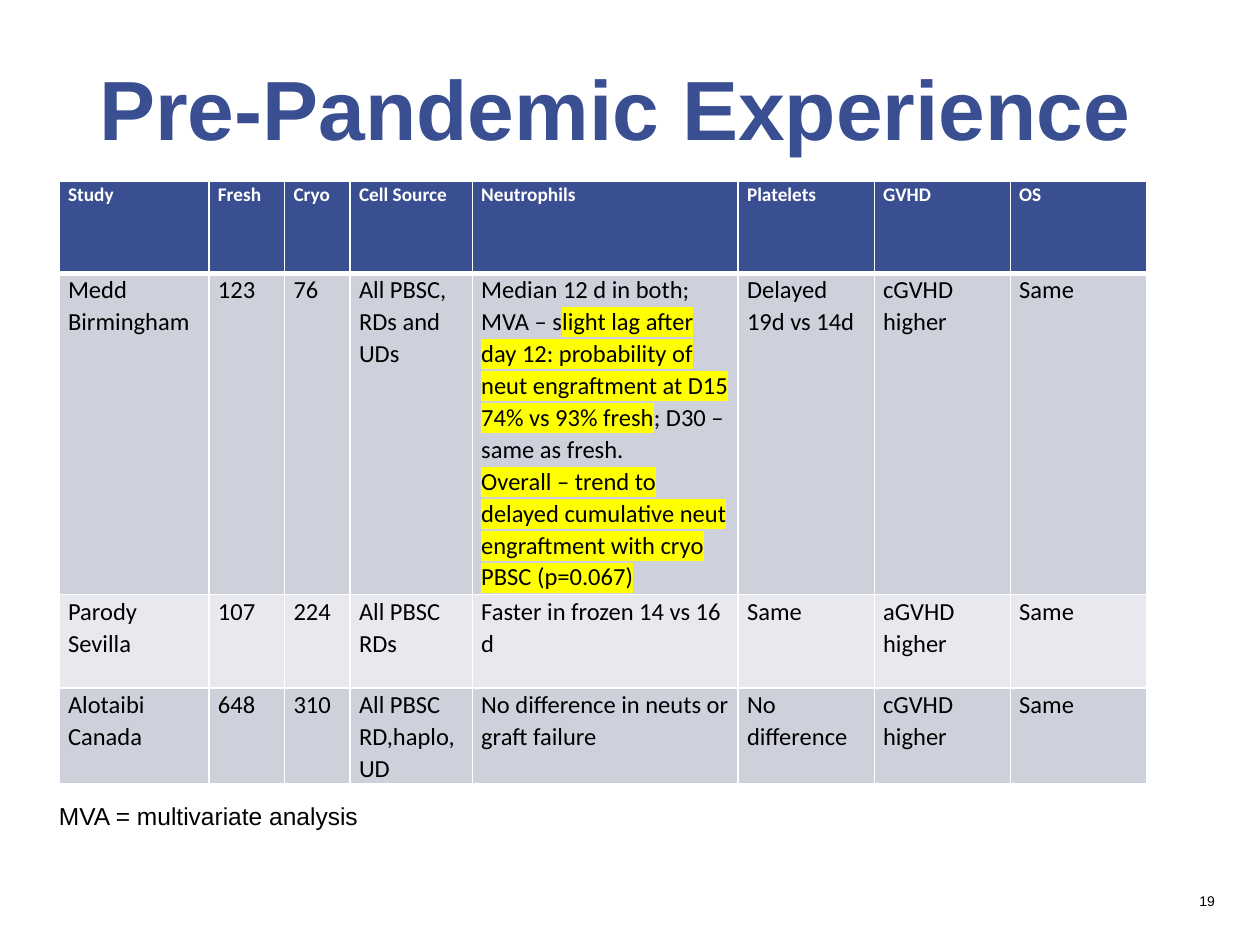
from lxml import etree
from pptx import Presentation
from pptx.dml.color import RGBColor
from pptx.enum.text import MSO_ANCHOR, PP_ALIGN
from pptx.oxml.ns import qn
from pptx.util import Inches, Pt

TOP, MIDDLE, BOTTOM = MSO_ANCHOR.TOP, MSO_ANCHOR.MIDDLE, MSO_ANCHOR.BOTTOM
LEFT, RIGHT = PP_ALIGN.LEFT, PP_ALIGN.RIGHT

COLORS = {
    "navy": "3A4F92",
    "white": "FFFFFF",
    "black": "000000",
    "band_dark": "CED0DC",
    "band_light": "E8E9EE",
    "highlight": "FFFF00",
}

COL_WIDTHS = [1.19, 0.6, 0.52, 0.97, 2.11, 1.08, 1.08, 1.08]
ROW_HEIGHTS = [0.73, 2.55, 0.74, 0.76]

# A cell is a string with one paragraph per line; text between * is highlighted.
ROWS = [
    ["Study", "Fresh", "Cryo", "Cell Source", "Neutrophils", "Platelets", "GVHD", "OS"],
    ["Medd Birmingham", "123", "76", "All PBSC,\nRDs and UDs",
     "Median 12 d in both; MVA – s*light lag after day 12: probability of neut "
     "engraftment at D15 74% vs 93% fresh*; D30 – same as fresh.\n"
     "*Overall – trend to delayed cumulative neut engraftment with cryo PBSC (p=0.067)*",
     "Delayed 19d vs 14d", "cGVHD higher", "Same"],
    ["Parody\nSevilla", "107", "224", "All PBSC\nRDs", "Faster in frozen 14 vs 16 d",
     "Same", "aGVHD higher", "Same"],
    ["Alotaibi\nCanada", "648", "310", "All PBSC\nRD,haplo,UD",
     "No difference in neuts or graft failure", "No difference", "cGVHD\nhigher", "Same"],
]


def add_run(p, text, font, size, color, bold=False, highlight=False):
    r = p.add_run()
    r.text = text
    r.font.size = Pt(size)
    r.font.bold = bold
    r.font.color.rgb = RGBColor.from_string(COLORS[color])
    if highlight:
        hl = etree.SubElement(r._r.get_or_add_rPr(), qn("a:highlight"))
        etree.SubElement(hl, qn("a:srgbClr"), val=COLORS["highlight"])
    r.font.name = font


def add_text(s, box, text, size, color, bold=False, align=LEFT, anchor=TOP):
    sp = s.shapes.add_textbox(*map(Inches, box))
    tf = sp.text_frame
    tf.word_wrap = True
    tf.vertical_anchor = anchor
    p = tf.paragraphs[0]
    p.alignment = align
    add_run(p, text, "Arial", size, color, bold)


def set_borders(cell, top, bottom):
    """Draw white borders, with the given top and bottom widths in points."""
    tcPr = cell._tc.get_or_add_tcPr()
    for side, width in (("L", 1), ("R", 1), ("T", top), ("B", bottom)):
        ln = etree.SubElement(tcPr, qn(f"a:ln{side}"), w=str(Pt(width)))
        fill = etree.SubElement(ln, qn("a:solidFill"))
        etree.SubElement(fill, qn("a:srgbClr"), val=COLORS["white"])


def fill_cell(cell, text, row):
    header = row == 0
    band = "navy" if header else "band_dark" if row % 2 else "band_light"
    set_borders(cell, top=3 if row == 1 else 1, bottom=3 if header else 1)
    cell.fill.solid()
    cell.fill.fore_color.rgb = RGBColor.from_string(COLORS[band])
    cell.margin_left = cell.margin_right = Inches(0.07)
    cell.margin_top = cell.margin_bottom = 0
    tf = cell.text_frame
    for i, line in enumerate(text.split("\n")):
        p = tf.add_paragraph() if i else tf.paragraphs[0]
        p.line_spacing = 1.07
        for j, part in enumerate(line.split("*")):
            if part:
                add_run(p, part, "Calibri", 11 if header else 14,
                        "white" if header else "black", header, j % 2 == 1)


def add_study_table(s, box):
    table = s.shapes.add_table(len(ROWS), len(COL_WIDTHS), *map(Inches, box)).table
    for col, width in zip(table.columns, COL_WIDTHS):
        col.width = Inches(width)
    for i, (height, texts) in enumerate(zip(ROW_HEIGHTS, ROWS)):
        table.rows[i].height = Inches(height)
        for j, text in enumerate(texts):
            fill_cell(table.cell(i, j), text, i)


def main():
    prs = Presentation()
    prs.slide_width, prs.slide_height = Inches(10), Inches(7.5)
    s = prs.slides.add_slide(prs.slide_layouts[6])
    add_text(s, (0.69, 0.38, 8.62, 0.92), "Pre-Pandemic Experience", 48, "navy",
             bold=True, anchor=BOTTOM)
    add_study_table(s, (0.47, 1.44, sum(COL_WIDTHS), sum(ROW_HEIGHTS)))
    add_text(s, (6.92, 6.95, 2.82, 0.4), "19", 8, "black", align=RIGHT, anchor=MIDDLE)
    add_text(s, (0.37, 6.31, 3.06, 0.34), "MVA = multivariate analysis", 14, "black")
    prs.save("out.pptx")


if __name__ == "__main__":
    main()
